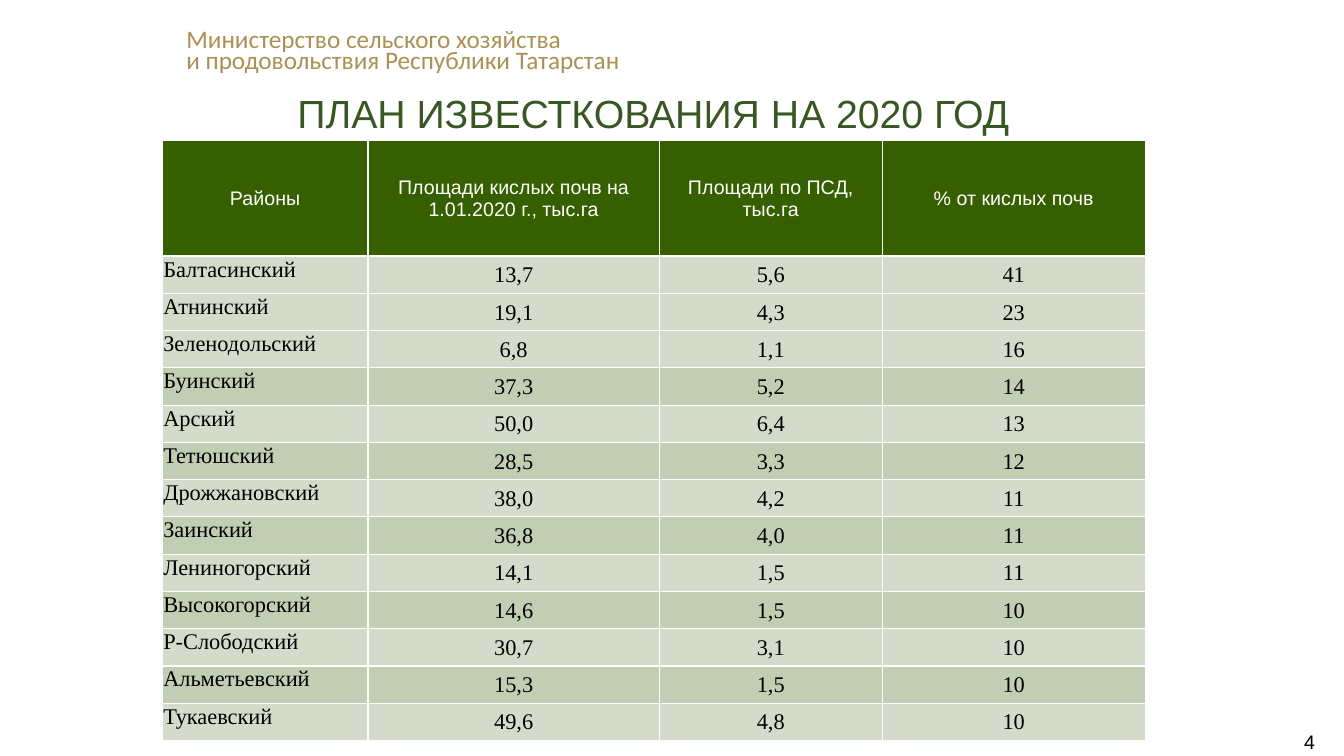
from lxml import etree
from pptx import Presentation
from pptx.dml.color import RGBColor
from pptx.enum.text import MSO_ANCHOR, PP_ALIGN
from pptx.oxml.ns import qn
from pptx.util import Inches, Pt

LEFT, CENTER = PP_ALIGN.LEFT, PP_ALIGN.CENTER
TOP, MIDDLE = MSO_ANCHOR.TOP, MSO_ANCHOR.MIDDLE

WHITE = RGBColor(0xFF, 0xFF, 0xFF)
BLACK = RGBColor(0, 0, 0)
GOLD = RGBColor(0xAC, 0x90, 0x54)
TITLE_GREEN = RGBColor(0x38, 0x57, 0x23)
HEADER_GREEN = RGBColor(0x36, 0x60, 0x00)
LIGHT_BAND = RGBColor(0xD4, 0xDB, 0xCA)
DARK_BAND = RGBColor(0xC2, 0xCE, 0xB3)

COLUMN_WIDTHS = (2.04, 2.89, 2.21, 2.61)
HEADER_HEIGHT = 1.15
ROW_HEIGHT = 0.37
FIRST_DARK_ROW = 4
HEADINGS = (
    "Районы",
    "Площади кислых почв на 1.01.2020 г., тыс.га",
    "Площади по ПСД, тыс.га",
    "% от кислых почв",
)
DISTRICTS = (
    ("Балтасинский", "13,7", "5,6", "41"),
    ("Атнинский", "19,1", "4,3", "23"),
    ("Зеленодольский", "6,8", "1,1", "16"),
    ("Буинский", "37,3", "5,2", "14"),
    ("Арский", "50,0", "6,4", "13"),
    ("Тетюшский", "28,5", "3,3", "12"),
    ("Дрожжановский", "38,0", "4,2", "11"),
    ("Заинский", "36,8", "4,0", "11"),
    ("Лениногорский", "14,1", "1,5", "11"),
    ("Высокогорский", "14,6", "1,5", "10"),
    ("Р-Слободский", "30,7", "3,1", "10"),
    ("Альметьевский", "15,3", "1,5", "10"),
    ("Тукаевский", "49,6", "4,8", "10"),
)


def write_text(text_frame, text, font_name, size, color, alignment, spacing=None):
    text_frame.text = text
    for paragraph in text_frame.paragraphs:
        paragraph.alignment = alignment
        if spacing:
            paragraph.line_spacing = spacing
        for run in paragraph.runs:
            run.font.name = font_name
            run.font.size = Pt(size)
            run.font.bold = False
            run.font.color.rgb = color


def set_margins(target, left, top, right, bottom):
    target.margin_left = Inches(left)
    target.margin_top = Inches(top)
    target.margin_right = Inches(right)
    target.margin_bottom = Inches(bottom)


def add_ministry(slide, left, top, width, height):
    box = slide.shapes.add_textbox(Inches(left), Inches(top), Inches(width), Inches(height))
    box.text_frame.word_wrap = False
    text = "Министерство сельского хозяйства\nи продовольствия Республики Татарстан"
    write_text(box.text_frame, text, "Calibri", 18, GOLD, LEFT, 0.7)


def place_title(slide, left, top, width, height):
    title = slide.shapes.title
    title.left, title.top = Inches(left), Inches(top)
    title.width, title.height = Inches(width), Inches(height)
    set_margins(title.text_frame, 0.1, 0, 0.1, 0)
    title.text_frame.vertical_anchor = MIDDLE
    write_text(title.text_frame, "ПЛАН ИЗВЕСТКОВАНИЯ НА 2020 ГОД",
               "Arial", 28, TITLE_GREEN, CENTER, Pt(24))


def add_borders(cell):
    properties = cell._tc.get_or_add_tcPr()
    for side in ("a:lnL", "a:lnR", "a:lnT", "a:lnB"):
        line = etree.SubElement(properties, qn(side), w=str(Pt(1)))
        fill = etree.SubElement(line, qn("a:solidFill"))
        etree.SubElement(fill, qn("a:srgbClr"), val=str(WHITE))


def format_cell(cell, text, row, column):
    set_margins(cell, 0.01, 0.01, 0.01, 0)
    add_borders(cell)
    is_header = row == 0
    is_district = column == 0 and not is_header
    is_dark = row >= FIRST_DARK_ROW and row % 2 == 0
    cell.fill.solid()
    cell.fill.fore_color.rgb = HEADER_GREEN if is_header else DARK_BAND if is_dark else LIGHT_BAND
    cell.vertical_anchor = TOP if is_district else MIDDLE
    font_name, size, color = ("Arial", 14, WHITE) if is_header else ("Times New Roman", 16, BLACK)
    write_text(cell.text_frame, text, font_name, size, color, LEFT if is_district else CENTER)


def add_liming_table(slide, left, top):
    rows = (HEADINGS,) + DISTRICTS
    height = HEADER_HEIGHT + ROW_HEIGHT * len(DISTRICTS)
    table = slide.shapes.add_table(
        len(rows), len(HEADINGS), Inches(left), Inches(top),
        Inches(sum(COLUMN_WIDTHS)), Inches(height)).table
    for column, width in zip(table.columns, COLUMN_WIDTHS):
        column.width = Inches(width)
    for row_index, values in enumerate(rows):
        table.rows[row_index].height = Inches(ROW_HEIGHT if row_index else HEADER_HEIGHT)
        for column_index, text in enumerate(values):
            format_cell(table.cell(row_index, column_index), text, row_index, column_index)


def add_page_number(slide, left, top, width, height):
    box = slide.shapes.add_textbox(Inches(left), Inches(top), Inches(width), Inches(height))
    set_margins(box.text_frame, 0, 0, 0, 0)
    box.text_frame.word_wrap = False
    write_text(box.text_frame, "4", "Arial", 14, BLACK, CENTER)


def main():
    presentation = Presentation()
    presentation.slide_width = Inches(13.33)
    presentation.slide_height = Inches(7.5)
    slide = presentation.slides.add_slide(presentation.slide_layouts[5])
    add_ministry(slide, 1.75, 0.26, 4.55, 0.54)
    place_title(slide, 1.63, 0.98, 9.7, 0.41)
    add_liming_table(slide, 1.61, 1.39)
    add_page_number(slide, 12.86, 7.24, 0.26, 0.23)
    presentation.save("out.pptx")


if __name__ == "__main__":
    main()
